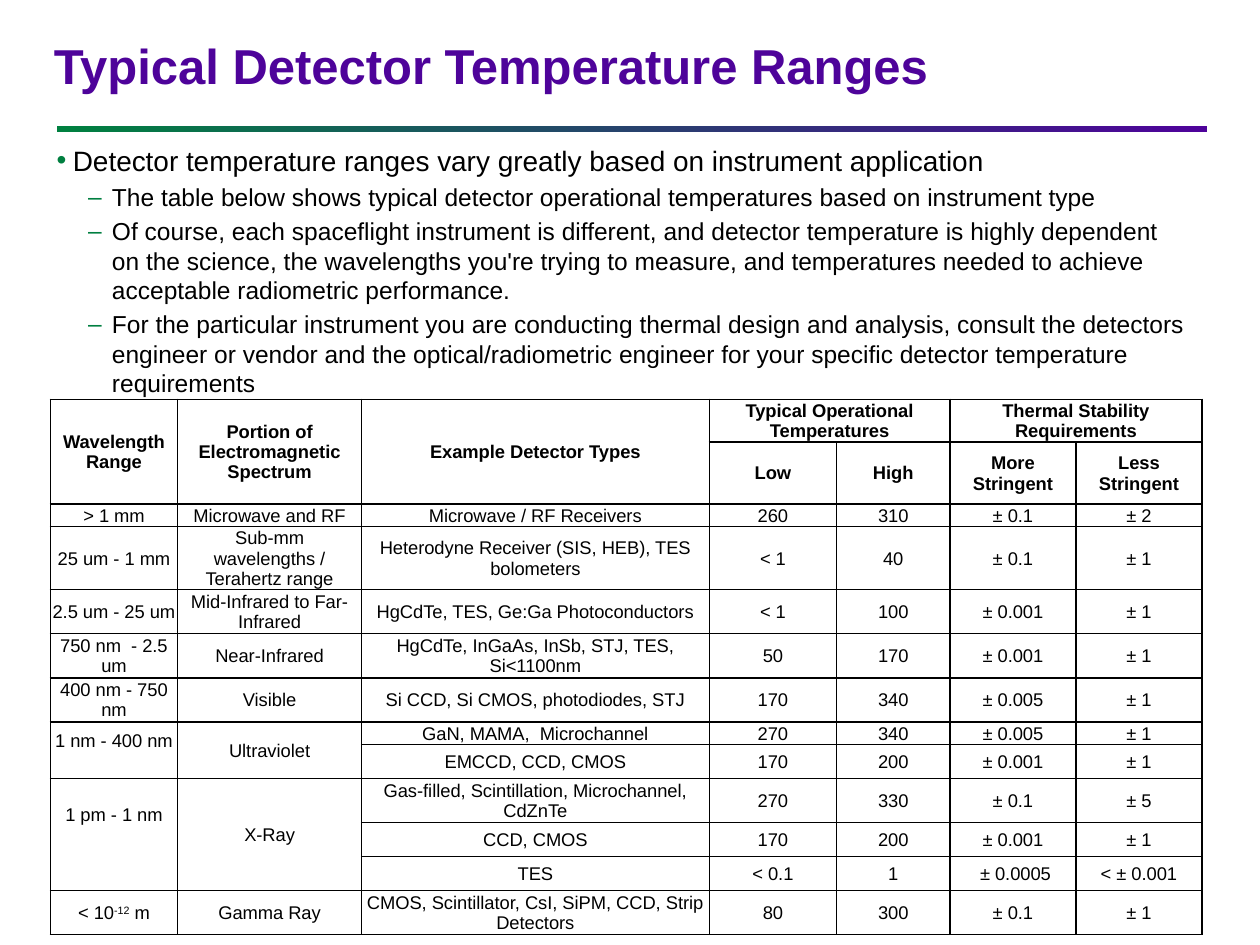
"""Build a slide on typical detector temperature ranges."""
from dataclasses import dataclass
from typing import NamedTuple

from lxml.etree import SubElement
from pptx import Presentation
from pptx.dml.color import RGBColor
from pptx.enum.shapes import MSO_SHAPE as Shape
from pptx.enum.text import MSO_ANCHOR as Anchor, PP_ALIGN as Align
from pptx.oxml.ns import qn
from pptx.util import Inches, Pt


@dataclass(frozen=True)
class Theme:
    font: str = "Arial"
    purple: str = "4E039A"
    green: str = "008040"
    bullet: str = "007F40"
    ink: str = "000000"
    paper: str = "FFFFFF"
    title_size: float = 28
    cell_size: float = 10.5
    cell_leading: float = 11.5
    border: float = 1


THEME = Theme()


class Level(NamedTuple):
    size: float
    margin: float
    hang: float
    bullet: str


class Point(NamedTuple):
    level: Level
    text: str


class Band(NamedTuple):
    wavelength: str
    spectrum: str
    detectors: list[tuple[str, ...]]


class Heading(NamedTuple):
    row: int
    column: int
    row_span: int
    column_span: int
    text: str


MAIN = Level(16, 0.13, 0.13, "•")
SUB = Level(14, 0.44, 0.19, "–")
POINTS = [
    Point(MAIN, "Detector temperature ranges vary greatly based on instrument application"),
    Point(SUB, "The table below shows typical detector operational temperatures based on instrument type"),
    Point(SUB, "Of course, each spaceflight instrument is different, and detector temperature is highly "
               "dependent on the science, the wavelengths you're trying to measure, and temperatures "
               "needed to achieve acceptable radiometric performance."),
    Point(SUB, "For the particular instrument you are conducting thermal design and analysis, consult the "
               "detectors engineer or vendor and the optical/radiometric engineer for your specific "
               "detector temperature requirements"),
]
HEADINGS = [
    Heading(0, 0, 2, 1, "Wavelength Range"),
    Heading(0, 1, 2, 1, "Portion of Electromagnetic Spectrum"),
    Heading(0, 2, 2, 1, "Example Detector Types"),
    Heading(0, 3, 1, 2, "Typical Operational Temperatures"),
    Heading(0, 5, 1, 2, "Thermal Stability Requirements"),
    Heading(1, 3, 1, 1, "Low"),
    Heading(1, 4, 1, 1, "High"),
    Heading(1, 5, 1, 1, "More Stringent"),
    Heading(1, 6, 1, 1, "Less Stringent"),
]
BANDS = [
    Band("> 1 mm", "Microwave and RF", [("Microwave / RF Receivers", "260", "310", "± 0.1", "± 2")]),
    Band("25 um - 1 mm", "Sub-mm wavelengths / Terahertz range",
         [("Heterodyne Receiver (SIS, HEB), TES bolometers", "< 1", "40", "± 0.1", "± 1")]),
    Band("2.5 um - 25 um", "Mid-Infrared to Far-Infrared",
         [("HgCdTe, TES, Ge:Ga Photoconductors", "< 1", "100", "± 0.001", "± 1")]),
    Band("750 nm  - 2.5 um", "Near-Infrared",
         [("HgCdTe, InGaAs, InSb, STJ, TES, Si<1100nm", "50", "170", "± 0.001", "± 1")]),
    Band("400 nm - 750 nm", "Visible",
         [("Si CCD, Si CMOS, photodiodes, STJ", "170", "340", "± 0.005", "± 1")]),
    Band("1 nm - 400 nm", "Ultraviolet",
         [("GaN, MAMA,  Microchannel", "270", "340", "± 0.005", "± 1"),
          ("EMCCD, CCD, CMOS", "170", "200", "± 0.001", "± 1")]),
    Band("1 pm - 1 nm", "X-Ray",
         [("Gas-filled, Scintillation, Microchannel, CdZnTe", "270", "330", "± 0.1", "± 5"),
          ("CCD, CMOS", "170", "200", "± 0.001", "± 1"),
          ("TES", "< 0.1", "1", " ± 0.0005", "< ± 0.001")]),
    Band("< 10^-12^ m", "Gamma Ray",
         [("CMOS, Scintillator, CsI, SiPM, CCD, Strip Detectors", "80", "300", "± 0.1", "± 1")]),
]
COLUMN_WIDTHS = [1.01, 1.46, 2.76, 1.01, 0.9, 1, 1]
ROW_HEIGHTS = [0.34, 0.49, 0.18, 0.5, 0.35, 0.35, 0.35, 0.18, 0.27, 0.35, 0.27, 0.27, 0.35]


def add_span(para, text: str, size: float, color: str = THEME.ink, bold: bool = False):
    span = para.add_run()
    span.text = text
    span.font.name, span.font.size, span.font.bold = THEME.font, Pt(size), bold
    span.font.color.rgb = RGBColor.from_string(color)
    return span


def add_box(page, left: float, top: float, width: float, height: float):
    box = page.shapes.add_textbox(Inches(left), Inches(top), Inches(width), Inches(height))
    box.text_frame.word_wrap = True
    return box.text_frame


def add_title(page, text: str) -> None:
    frame = add_box(page, 0.33, 0.2, 8.02, 0.72)
    frame.vertical_anchor = Anchor.MIDDLE
    para = frame.paragraphs[0]
    para.line_spacing = 0.8
    add_span(para, text, THEME.title_size, THEME.purple, True)


def add_rule(page) -> None:
    bar = page.shapes.add_shape(Shape.RECTANGLE, Inches(0.45), Inches(1), Inches(9.13), Inches(0.05))
    bar.shadow.inherit = False
    bar.line.fill.background()
    bar.fill.gradient()
    bar.fill.gradient_angle = 0
    for stop, color in zip(bar.fill.gradient_stops, (THEME.green, THEME.purple)):
        stop.color.rgb = RGBColor.from_string(color)


def add_points(page, points: list[Point]) -> None:
    frame = add_box(page, 0.35, 1.09, 9.19, 5.64)
    for index, (level, text) in enumerate(points):
        para = frame.add_paragraph() if index else frame.paragraphs[0]
        para.space_before = Pt(level.size * 0.2)
        props = para._p.get_or_add_pPr()
        props.set("marL", str(Inches(level.margin)))
        props.set("indent", str(-Inches(level.hang)))
        SubElement(SubElement(props, qn("a:buClr")), qn("a:srgbClr"), val=THEME.bullet)
        SubElement(props, qn("a:buFont"), typeface=THEME.font)
        SubElement(props, qn("a:buChar"), char=level.bullet)
        add_span(para, text, level.size)


def style_cell(cell) -> None:
    cell.margin_left = cell.margin_right = cell.margin_top = Inches(0.01)
    cell.margin_bottom = 0
    cell.vertical_anchor = Anchor.MIDDLE
    for para in cell.text_frame.paragraphs:
        para.font.size = Pt(THEME.cell_size)
        para.line_spacing = Pt(THEME.cell_leading)
    props = cell._tc.get_or_add_tcPr()
    for side in ("lnL", "lnR", "lnT", "lnB"):
        line = SubElement(props, qn(f"a:{side}"), w=str(Pt(THEME.border)))
        SubElement(SubElement(line, qn("a:solidFill")), qn("a:srgbClr"), val=THEME.ink)
    cell.fill.solid()
    cell.fill.fore_color.rgb = RGBColor.from_string(THEME.paper)


def write_cell(cell, text: str, bold: bool = False) -> None:
    para = cell.text_frame.paragraphs[0]
    para.alignment = Align.CENTER
    for index, part in enumerate(text.split("^")):
        span = add_span(para, part, THEME.cell_size, bold=bold)
        if index % 2:
            span._r.get_or_add_rPr().set("baseline", "30000")


def add_detector_table(page) -> None:
    table = page.shapes.add_table(len(ROW_HEIGHTS), len(COLUMN_WIDTHS), Inches(0.4), Inches(3.17),
                                  Inches(sum(COLUMN_WIDTHS)), Inches(sum(ROW_HEIGHTS))).table
    table.first_row = table.horz_banding = False
    for column, width in zip(table.columns, COLUMN_WIDTHS):
        column.width = Inches(width)
    for row, height in zip(table.rows, ROW_HEIGHTS):
        row.height = Inches(height)
        for cell in row.cells:
            style_cell(cell)

    def fill_block(row: int, column: int, rows: int, columns: int, text: str, bold: bool = False):
        cell = table.cell(row, column)
        if rows * columns > 1:
            cell.merge(table.cell(row + rows - 1, column + columns - 1))
        write_cell(cell, text, bold)
        return cell

    for heading in HEADINGS:
        fill_block(*heading, bold=True)
    top = 2
    for band in BANDS:
        count = len(band.detectors)
        wavelength = fill_block(top, 0, count, 1, band.wavelength)
        wavelength.margin_bottom = Pt(THEME.cell_leading * (count - 1))
        fill_block(top, 1, count, 1, band.spectrum)
        for row, detector in enumerate(band.detectors, top):
            for column, text in enumerate(detector, 2):
                write_cell(table.cell(row, column), text)
        top += count


def main() -> None:
    deck = Presentation()
    deck.slide_width, deck.slide_height = Inches(10), Inches(7.5)
    page = deck.slides.add_slide(deck.slide_layouts[6])
    add_rule(page)
    add_title(page, "Typical Detector Temperature Ranges")
    add_points(page, POINTS)
    add_detector_table(page)
    deck.save("out.pptx")


if __name__ == "__main__":
    main()
